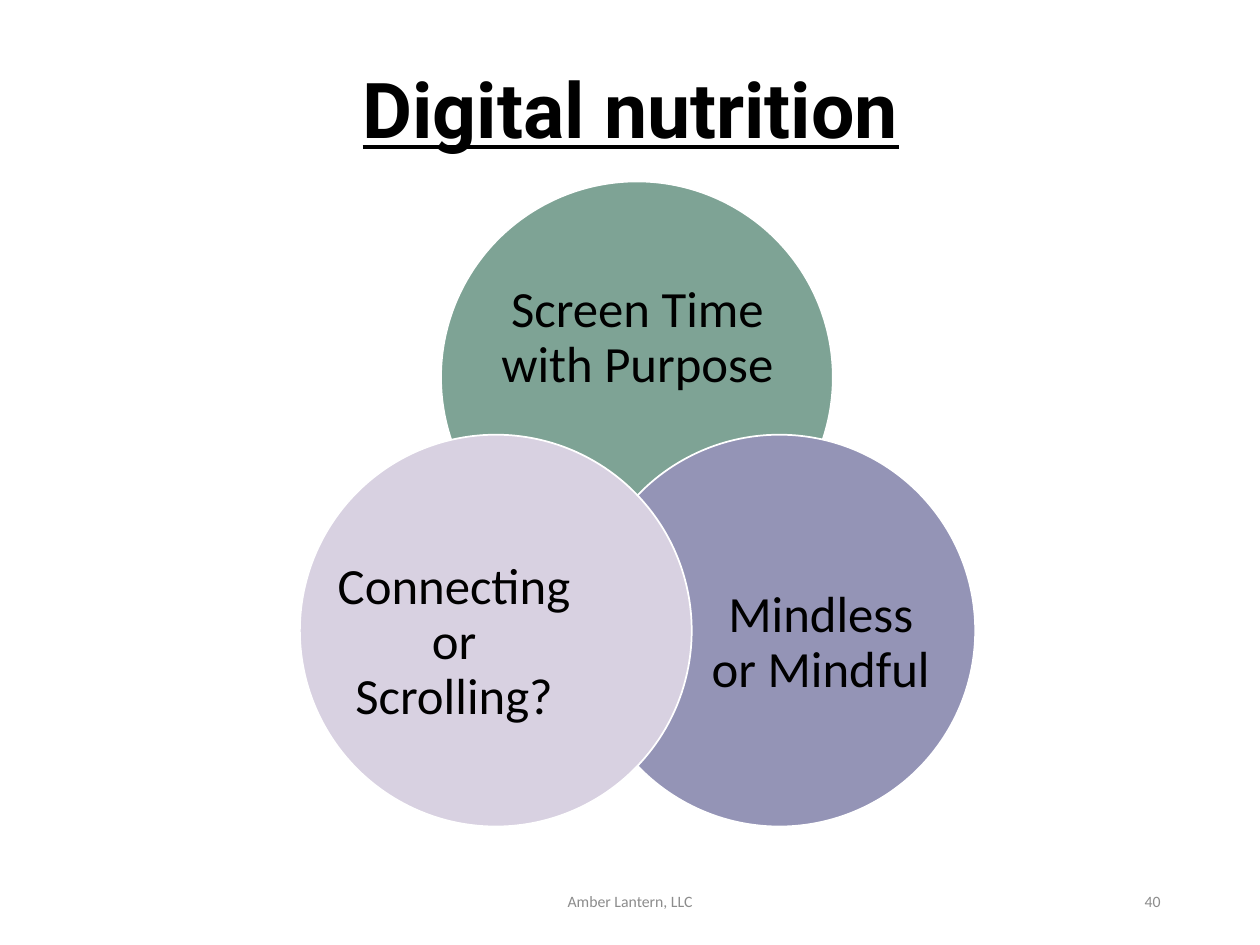
"""Build the digital nutrition slide with three overlapping circles."""
from dataclasses import dataclass

from pptx import Presentation
from pptx.dml.color import RGBColor
from pptx.enum.shapes import MSO_SHAPE
from pptx.enum.text import MSO_ANCHOR, PP_ALIGN
from pptx.util import Inches, Pt

OVAL = MSO_SHAPE.OVAL
MIDDLE = MSO_ANCHOR.MIDDLE
CENTER, RIGHT = PP_ALIGN.CENTER, PP_ALIGN.RIGHT


@dataclass(frozen=True)
class Theme:
    ink: str = "000000"
    gray: str = "8C8C8C"
    white: str = "FFFFFF"
    green: str = "7EA395"
    blue: str = "9494B6"
    lilac: str = "D8D1E1"
    head: str = "Roboto"
    body: str = "Calibri"
    title: int = 44
    label: int = 29
    small: int = 9


theme = Theme()


def write(shape, text, size, color=theme.ink, face=theme.body, align=CENTER,
          space=1.0, inset=None, bold=False, line=False):
    frame = shape.text_frame
    frame.word_wrap = True
    frame.vertical_anchor = MIDDLE
    if inset is not None:
        frame.margin_left = frame.margin_right = Inches(inset)
        frame.margin_top = frame.margin_bottom = Inches(inset)
    para = frame.paragraphs[0]
    para.alignment = align
    para.line_spacing = space
    run = para.add_run()
    run.text = text
    font = run.font
    font.name, font.size = face, Pt(size)
    font.bold, font.underline = bold, line
    font.color.rgb = RGBColor.from_string(color)


deck = Presentation()
deck.slide_width, deck.slide_height = Inches(10), Inches(7.5)
slide = deck.slides.add_slide(deck.slide_layouts[5])
shapes = slide.shapes

title = shapes.title
title.left, title.top = Inches(0.69), Inches(0.18)
title.width, title.height = Inches(8.63), Inches(1.45)
write(title, "Digital nutrition", theme.title, face=theme.head, space=0.9,
      bold=True, line=True)

size = 3.11
circles = [
    (3.5, 1.44, theme.green, "Screen Time with Purpose", (3.92, 1.99, 2.28, 1.4)),
    (4.63, 3.45, theme.blue, "Mindless or Mindful", (5.58, 4.25, 1.87, 1.71)),
    (2.38, 3.45, theme.lilac, "Connecting or Scrolling?", (2.67, 4.25, 1.87, 1.71)),
]
for left, top, fill, text, box in circles:
    oval = shapes.add_shape(OVAL, Inches(left), Inches(top), Inches(size), Inches(size))
    oval.shadow.inherit = False
    oval.fill.solid()
    oval.fill.fore_color.rgb = RGBColor.from_string(fill)
    oval.line.color.rgb = RGBColor.from_string(theme.white)
    oval.line.width = Pt(1)
    label = shapes.add_textbox(*map(Inches, box))
    write(label, text, theme.label, space=0.9, inset=0)

footers = [
    (3.31, 3.38, "Amber Lantern, LLC", CENTER),
    (7.06, 2.25, "40", RIGHT),
]
for left, width, text, align in footers:
    foot = shapes.add_textbox(Inches(left), Inches(6.95), Inches(width), Inches(0.4))
    write(foot, text, theme.small, color=theme.gray, align=align)

deck.save("out.pptx")
